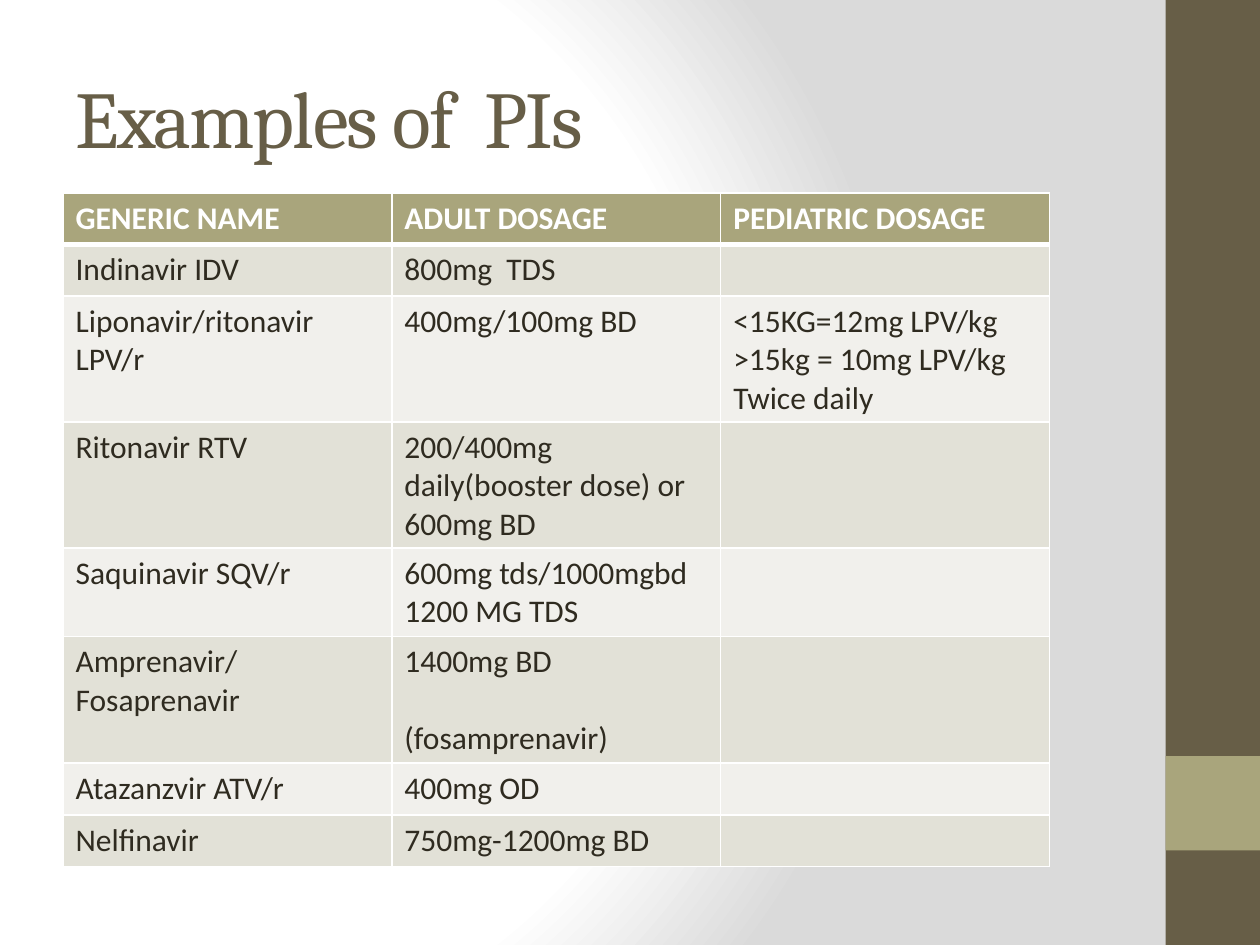
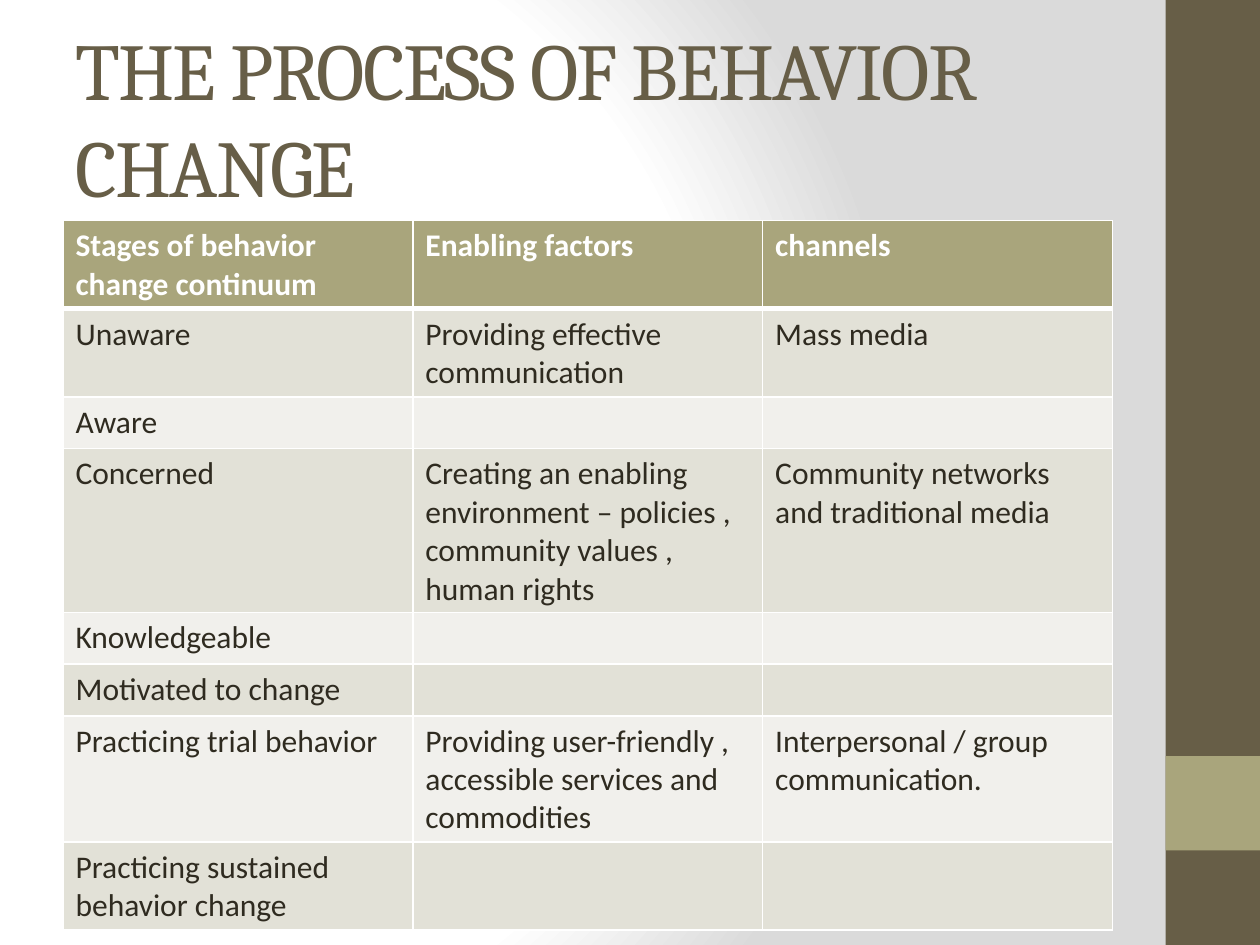
from lxml import etree
from pptx import Presentation
from pptx.dml.color import RGBColor
from pptx.enum import shapes, text
from pptx.oxml import ns, parse_xml
from pptx.util import Inches, Pt

SLIDES = [
    {
        "title": "Examples of  PIs",
        "top": 1.53,
        "width": 7.83,
        "rows": [
            ("GENERIC NAME", "ADULT DOSAGE", "PEDIATRIC DOSAGE"),
            ("Indinavir IDV", "800mg  TDS", ""),
            ("Liponavir/ritonavir LPV/r", "400mg/100mg BD",
             ("<15KG=12mg LPV/kg", ">15kg = 10mg LPV/kg", "Twice daily")),
            ("Ritonavir RTV", "200/400mg daily(booster dose) or 600mg BD", ""),
            ("Saquinavir SQV/r", ("600mg tds/1000mgbd", "1200 MG TDS"), ""),
            ("Amprenavir/Fosaprenavir", ("1400mg BD", "(fosamprenavir)"), ""),
            ("Atazanzvir ATV/r", "400mg OD", ""),
            ("Nelfinavir", "750mg-1200mg BD", ""),
        ],
    },
    {
        "title": "THE PROCESS OF BEHAVIOR CHANGE",
        "top": 1.75,
        "width": 8.33,
        "rows": [
            ("Stages of behavior change continuum", "Enabling factors", "channels"),
            ("Unaware", "Providing effective communication", "Mass media"),
            ("Aware", "", ""),
            ("Concerned",
             "Creating an enabling environment – policies , community values , human rights",
             "Community networks and traditional media"),
            ("Knowledgeable", "", ""),
            ("Motivated to change", "", ""),
            ("Practicing trial behavior",
             "Providing user-friendly , accessible services and commodities",
             "Interpersonal / group communication."),
            ("Practicing sustained behavior change", "", ""),
        ],
    },
]
GAPS = {"(fosamprenavir)": 22}  # points of space above a line
BANDS = [(0, 7.5, "brown"), (6, 0.75, "olive")]  # top, height, colour
COLORS = {
    "brown": "675E47", "olive": "A9A57C", "ink": "2F2B20", "white": "FFFFFF",
    "odd": "E2E1D7", "even": "F1F0EC", "gray": "DADADA",
}
LEFT = 0.5
ROW = 0.41


def color(name):
    return RGBColor.from_string(COLORS[name])


def style(run, face, size, name, bold=False):
    font = run.font
    font.name, font.size, font.bold = face, Pt(size), bold
    font.color.rgb = color(name)


def set_back(master):
    """Give every slide the round white-to-gray gradient."""
    fill = master.background.fill
    fill.gradient()
    stops = "".join(
        f'<a:gs pos="{pos}000"><a:srgbClr val="{COLORS[name]}"/></a:gs>'
        for pos, name in [(0, "white"), (75, "white"), (100, "gray")])
    new = parse_xml(
        f'<a:gradFill {ns.nsdecls("a")} rotWithShape="1"><a:gsLst>{stops}</a:gsLst>'
        '<a:path path="circle"><a:fillToRect l="20000" t="50000" r="100000" b="50000"/>'
        '</a:path></a:gradFill>')
    old = master.element.find(".//" + ns.qn("a:gradFill"))
    old.getparent().replace(old, new)


def add_bands(slide):
    for top, height, name in BANDS:
        band = slide.shapes.add_shape(
            shapes.MSO_SHAPE.RECTANGLE, Inches(9.25), Inches(top), Inches(0.75), Inches(height))
        band.shadow.inherit = False
        band.fill.solid()
        band.fill.fore_color.rgb = color(name)
        band.line.fill.background()


def add_title(slide, words):
    box = slide.shapes.add_textbox(Inches(LEFT), Inches(0.3), Inches(8.33), Inches(1.25))
    frame = box.text_frame
    frame.word_wrap = True
    frame.vertical_anchor = text.MSO_ANCHOR.MIDDLE
    run = frame.paragraphs[0].add_run()
    run.text = words
    style(run, "Cambria", 46, "brown")
    run.font._element.set("spc", "-100")


def set_edges(cell, row):
    """White lines all round, thick where header and body meet."""
    props = cell._tc.get_or_add_tcPr()
    thick = {0: "B", 1: "T"}.get(row)
    for spot, side in enumerate("LRTB"):
        line = etree.Element(ns.qn("a:ln" + side), w=str(Pt(3 if side == thick else 1)))
        solid = etree.SubElement(line, ns.qn("a:solidFill"))
        etree.SubElement(solid, ns.qn("a:srgbClr"), val=COLORS["white"])
        props.insert(spot, line)


def fill_cell(cell, lines, row):
    cell.fill.solid()
    cell.fill.fore_color.rgb = color("olive" if row == 0 else "odd" if row % 2 else "even")
    set_edges(cell, row)
    lines = [lines] if isinstance(lines, str) else lines
    for spot, line in enumerate(lines):
        frame = cell.text_frame
        para = frame.add_paragraph() if spot else frame.paragraphs[0]
        if line in GAPS:
            para.space_before = Pt(GAPS[line])
        if line:
            run = para.add_run()
            run.text = line
            style(run, "Calibri", 18, "ink" if row else "white", row == 0)


def add_grid(slide, top, width, rows):
    count = len(rows[0])
    grid = slide.shapes.add_table(
        len(rows), count, Inches(LEFT), Inches(top),
        Inches(width), Inches(ROW * len(rows))).table
    for row, cells in enumerate(rows):
        for col, lines in enumerate(cells):
            fill_cell(grid.cell(row, col), lines, row)


def main():
    deck = Presentation()
    deck.slide_width, deck.slide_height = Inches(10), Inches(7.5)
    set_back(deck.slide_master)
    for page in SLIDES:
        slide = deck.slides.add_slide(deck.slide_layouts[6])
        add_bands(slide)
        add_title(slide, page["title"])
        add_grid(slide, page["top"], page["width"], page["rows"])
    deck.save("out.pptx")


if __name__ == "__main__":
    main()
